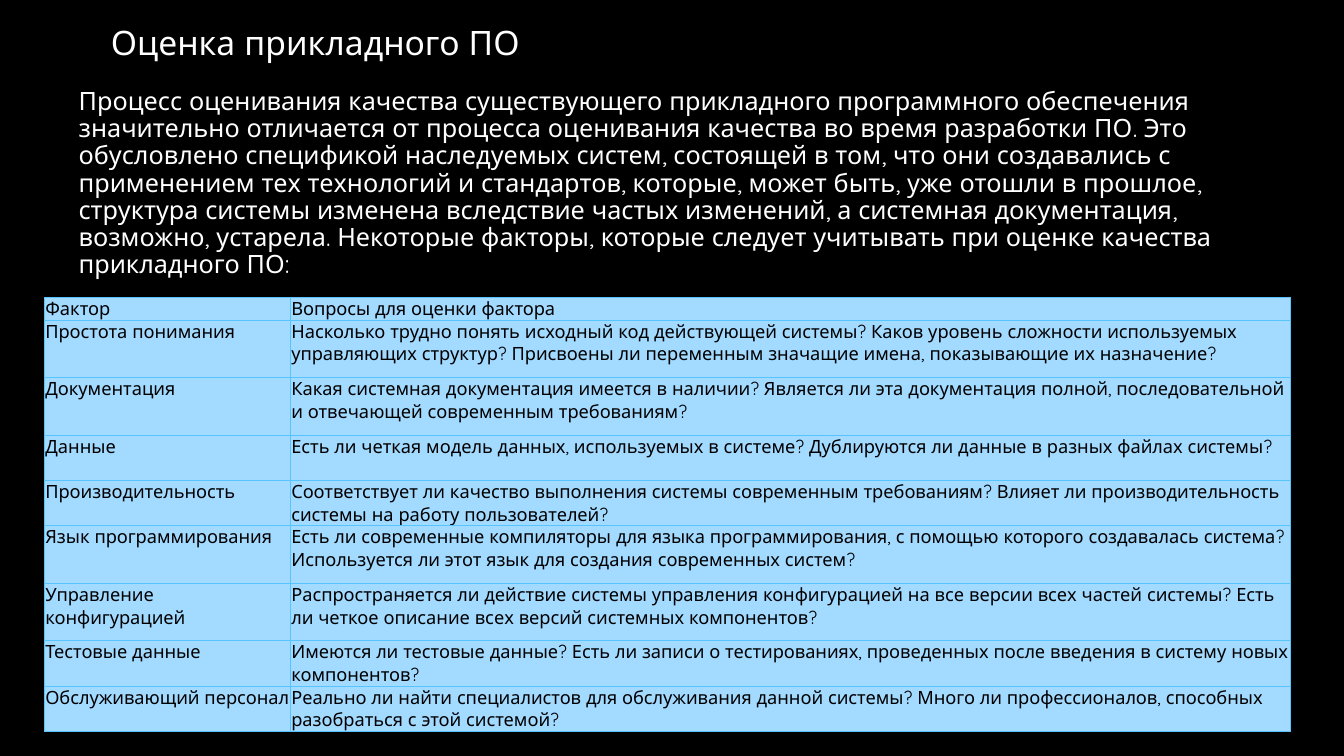
"""Build the slide on assessing legacy application software."""
import pptx
import pptx.dml.color
import pptx.enum.text
import pptx.oxml
import pptx.oxml.ns
import pptx.util
from pptx.util import Inches

FONT = "Quicksand"
NAMESPACE = pptx.oxml.ns.nsdecls("a")
INTRO = (
    "Процесс оценивания качества существующего прикладного программного обеспечения "
    "значительно отличается от процесса оценивания качества во время разработки ПО. "
    "Это обусловлено спецификой наследуемых систем, состоящей в том, что они создавались "
    "с применением тех технологий и стандартов, которые, может быть, уже отошли в прошлое, "
    "структура системы изменена вследствие частых изменений, а системная документация, "
    "возможно, устарела. Некоторые факторы, которые следует учитывать при оценке качества "
    "прикладного ПО:"
)
FACTORS = [
    (0.22, "Фактор", "Вопросы для оценки фактора"),
    (0.57, "Простота понимания",
     "Насколько трудно понять исходный код действующей системы? Каков уровень сложности "
     "используемых управляющих структур? Присвоены ли переменным значащие имена, "
     "показывающие их назначение?"),
    (0.57, "Документация",
     "Какая системная документация имеется в наличии? Является ли эта документация полной, "
     "последовательной и отвечающей современным требованиям?"),
    (0.45, "Данные",
     "Есть ли четкая модель данных, используемых в системе? Дублируются ли данные в разных "
     "файлах системы?"),
    (0.45, "Производительность",
     "Соответствует ли качество выполнения системы современным требованиям? Влияет ли "
     "производительность системы на работу пользователей?"),
    (0.57, "Язык программирования",
     "Есть ли современные компиляторы для языка программирования, с помощью которого "
     "создавалась система? Используется ли этот язык для создания современных систем?"),
    (0.57, "Управление конфигурацией",
     "Распространяется ли действие системы управления конфигурацией на все версии всех "
     "частей системы? Есть ли четкое описание всех версий системных компонентов?"),
    (0.45, "Тестовые данные",
     "Имеются ли тестовые данные? Есть ли записи о тестированиях, проведенных после "
     "введения в систему новых компонентов?"),
    (0.45, "Обслуживающий персонал",
     "Реально ли найти специалистов для обслуживания данной системы? Много ли "
     "профессионалов, способных разобраться с этой системой?"),
]


def paint(target, color):
    target.rgb = pptx.dml.color.RGBColor.from_string(color)


def set_font(para, size, color):
    para.font.name = FONT
    para.font.size = pptx.util.Pt(size)
    paint(para.font.color, color)


deck = pptx.Presentation()
deck.slide_width, deck.slide_height = Inches(13.33), Inches(7.5)
page = deck.slides.add_slide(deck.slide_layouts[1])
page.background.fill.solid()
paint(page.background.fill.fore_color, "000000")

heading, intro = page.placeholders
for box, place, size, text in [
    (heading, (1, 0.21, 11.18, 0.63), 24, "Оценка прикладного ПО"),
    (intro, (0.68, 0.83, 11.89, 2.36), 18, INTRO),
]:
    box.left, box.top, box.width, box.height = map(Inches, place)
    frame = box.text_frame
    frame.text = text
    frame.word_wrap = True
    frame.auto_size = pptx.enum.text.MSO_AUTO_SIZE.NONE
    frame.vertical_anchor = pptx.enum.text.MSO_ANCHOR.TOP
    para = frame.paragraphs[0]
    properties = para._p.get_or_add_pPr()
    properties.set("marL", "0")
    properties.set("indent", "0")
    properties.append(pptx.oxml.parse_xml(f"<a:buNone {NAMESPACE}/>"))
    para.alignment = pptx.enum.text.PP_ALIGN.LEFT
    para.line_spacing = 0.9
    para.space_before = pptx.util.Pt(0)
    set_font(para, size, "FFFFFF")

table = page.shapes.add_table(
    len(FACTORS), 2, Inches(0.44), Inches(2.95), Inches(12.36),
    Inches(sum(height for height, *_ in FACTORS))).table
table.first_row = table.horz_banding = False
table.columns[0].width, table.columns[1].width = Inches(2.44), Inches(9.92)

for row, (height, *texts) in zip(table.rows, FACTORS):
    row.height = Inches(height)
    for cell, text in zip(row.cells, texts):
        cell.text = text
        cell.margin_left = cell.margin_right = Inches(0.01)
        cell.margin_top = cell.margin_bottom = 0
        set_font(cell.text_frame.paragraphs[0], 13, "000000")
        for side in "LRTB":
            cell._tc.get_or_add_tcPr().append(pptx.oxml.parse_xml(
                f'<a:ln{side} {NAMESPACE} w="6350"><a:solidFill>'
                f'<a:srgbClr val="56C5FF"/></a:solidFill></a:ln{side}>'))
        cell.fill.solid()
        paint(cell.fill.fore_color, "A3DAFF")

deck.save("out.pptx")
